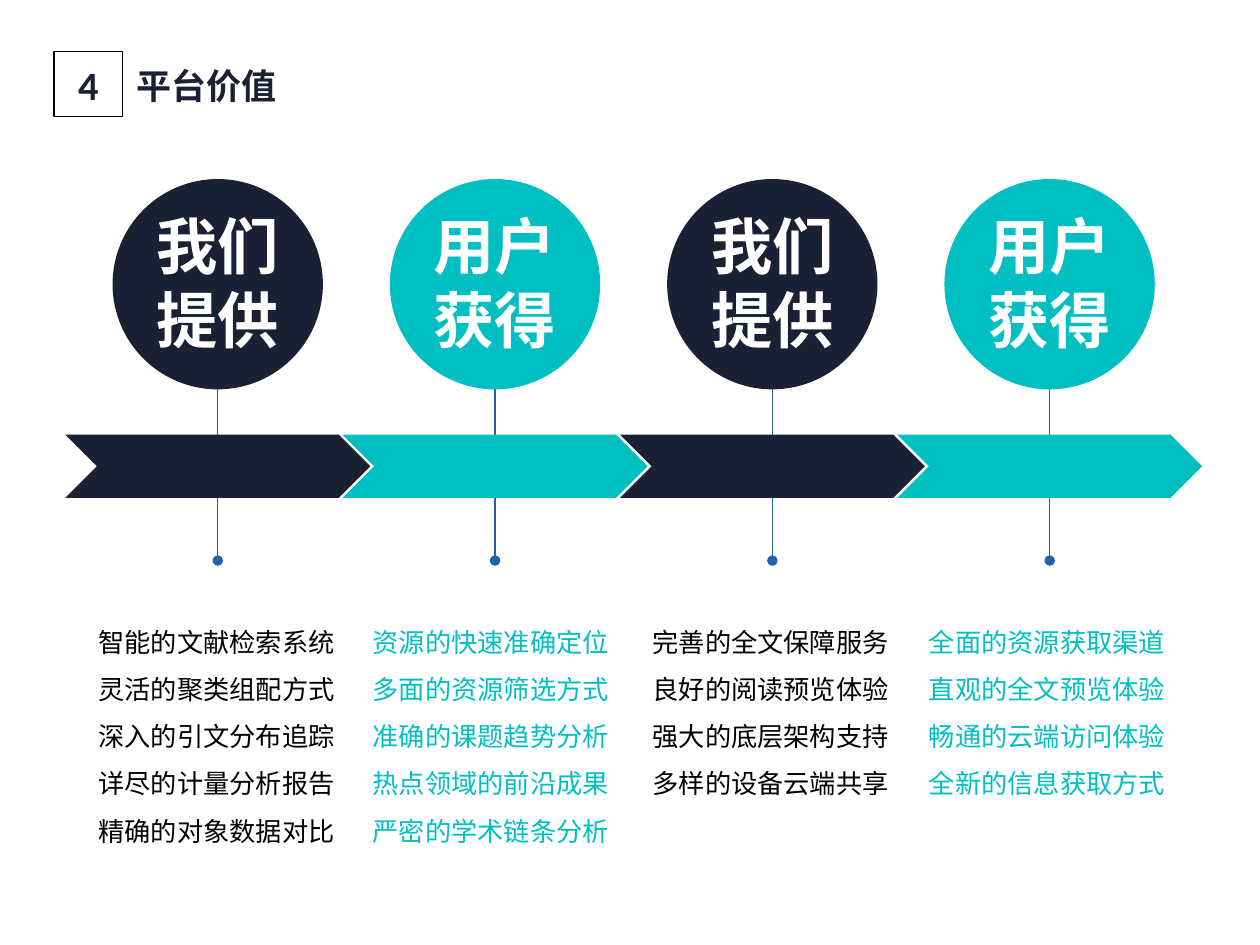
import dataclasses

import pptx
import pptx.dml.color
import pptx.enum.shapes
import pptx.enum.text
import pptx.oxml.ns
import pptx.util
from lxml import etree

Cm = pptx.util.Cm
Pt = pptx.util.Pt
SHAPE = pptx.enum.shapes.MSO_SHAPE
ALIGN = pptx.enum.text.PP_ALIGN
ANCHOR = pptx.enum.text.MSO_ANCHOR
qn = pptx.oxml.ns.qn


@dataclasses.dataclass(frozen=True)
class Theme:
    navy: str = "1B2135"
    teal: str = "00BFC3"
    blue: str = "2063AA"
    black: str = "000000"
    white: str = "FFFFFF"
    cjk: str = "Noto Sans CJK SC"
    display: str = "Quicksand"
    latin: str = "Calibri"
    title: int = 20
    number: int = 23
    circle: int = 35
    body: int = 15


THEME = Theme()

FIRST_CENTER = 4.39
PITCH = 5.59
CIRCLE = 4.24
CHEVRON_W, CHEVRON_H = 6.15, 1.28

PROVIDE = ("我们", "提供")
GAIN = ("用户", "获得")

STAGES = [
    (PROVIDE, THEME.navy, THEME.black, 1.73,
     ["智能的文献检索系统", "灵活的聚类组配方式", "深入的引文分布追踪",
      "详尽的计量分析报告", "精确的对象数据对比"]),
    (GAIN, THEME.teal, THEME.teal, 7.26,
     ["资源的快速准确定位", "多面的资源筛选方式", "准确的课题趋势分析",
      "热点领域的前沿成果", "严密的学术链条分析"]),
    (PROVIDE, THEME.navy, THEME.black, 12.9,
     ["完善的全文保障服务", "良好的阅读预览体验", "强大的底层架构支持",
      "多样的设备云端共享"]),
    (GAIN, THEME.teal, THEME.teal, 18.47,
     ["全面的资源获取渠道", "直观的全文预览体验", "畅通的云端访问体验",
      "全新的信息获取方式"]),
]


def rgb(color):
    return pptx.dml.color.RGBColor.from_string(color)


def place(sp, left, top, width, height):
    sp.left, sp.top, sp.width, sp.height = map(Cm, (left, top, width, height))


def add_run(p, text, size, color, font, bold=False):
    r = p.add_run()
    r.text = text
    r.font.size = Pt(size)
    r.font.bold = bold
    r.font.color.rgb = rgb(color)
    r.font.name = font
    etree.SubElement(r.font._element, qn("a:ea"), typeface=font)


def write_lines(tf, lines, align, spacing, size, color, font, bold=False):
    for i, line in enumerate(lines):
        p = tf.add_paragraph() if i else tf.paragraphs[0]
        p.alignment = align
        p.line_spacing = spacing
        p.space_before = Pt(0)
        add_run(p, line, size, color, font, bold)


def add_preset(s, kind, left, top, width, height, fill=None, line=None):
    sp = s.shapes.add_shape(kind, Cm(left), Cm(top), Cm(width), Cm(height))
    sp.shadow.inherit = False
    if fill:
        sp.fill.solid()
        sp.fill.fore_color.rgb = rgb(fill)
    else:
        sp.fill.background()
    if line:
        sp.line.color.rgb = rgb(line)
        sp.line.width = Pt(0.75)
    else:
        sp.line.fill.background()
    return sp


def add_stem(s, x):
    cxn = s.shapes.add_connector(
        pptx.enum.shapes.MSO_CONNECTOR.STRAIGHT, Cm(x), Cm(7.21), Cm(x), Cm(11.3))
    cxn.line.color.rgb = rgb(THEME.blue)
    cxn.line.width = Pt(0.75)
    etree.SubElement(cxn.line._get_or_add_ln(), qn("a:tailEnd"), type="oval")
    etree.SubElement(cxn._element.spPr, qn("a:effectLst"))


def add_circle(s, x, lines, color):
    sp = add_preset(s, SHAPE.OVAL, x - CIRCLE / 2, 3.61, CIRCLE, CIRCLE, color)
    tf = sp.text_frame
    tf.word_wrap = False
    tf.vertical_anchor = ANCHOR.MIDDLE
    tf.margin_top = 0
    tf.margin_bottom = Cm(0.1)
    write_lines(tf, lines, ALIGN.CENTER, Pt(42.5), THEME.circle, THEME.white,
                THEME.display, True)


def add_number(s, text):
    sp = add_preset(s, SHAPE.RECTANGLE, 1.09, 1.04, 1.38, 1.31, line=THEME.black)
    sp.text_frame.vertical_anchor = ANCHOR.MIDDLE
    write_lines(sp.text_frame, [text], ALIGN.CENTER, 1.0, THEME.number,
                THEME.navy, THEME.latin, True)


def fill_title(sp, text):
    place(sp, 2.49, 1.12, 10.64, 1.14)
    tf = sp.text_frame
    tf.auto_size = pptx.enum.text.MSO_AUTO_SIZE.NONE
    tf.vertical_anchor = ANCHOR.MIDDLE
    write_lines(tf, [text], ALIGN.LEFT, 1.1, THEME.title, THEME.navy,
                THEME.cjk, True)


def fill_list(sp, left, items, color):
    place(sp, left, 12.17, 5.41, 0.3 + 0.95 * len(items))
    tf = sp.text_frame
    tf.auto_size = pptx.enum.text.MSO_AUTO_SIZE.NONE
    tf.vertical_anchor = ANCHOR.TOP
    write_lines(tf, items, ALIGN.LEFT, Pt(27), THEME.body, color, THEME.cjk)
    for p in tf.paragraphs:
        pPr = p._p.get_or_add_pPr()
        pPr.set("marL", "0")
        pPr.set("indent", "0")
        etree.SubElement(pPr, qn("a:buNone"))


def main():
    prs = pptx.Presentation()
    prs.slide_width, prs.slide_height = Cm(25.4), Cm(19.05)
    s = prs.slides.add_slide(prs.slide_layouts.get_by_name("Comparison"))
    title, *lists = s.placeholders
    fill_title(title, "平台价值")
    add_number(s, "4")

    centers = [FIRST_CENTER + i * PITCH for i in range(len(STAGES))]
    for x in centers:
        add_stem(s, x)
    for x, sp, (label, fill, text_color, left, items) in zip(centers, lists, STAGES):
        add_circle(s, x, label, fill)
        add_preset(s, SHAPE.CHEVRON, x - CHEVRON_W / 2, 8.76,
                   CHEVRON_W, CHEVRON_H, fill)
        fill_list(sp, left, items, text_color)
    prs.save("out.pptx")


if __name__ == "__main__":
    main()
